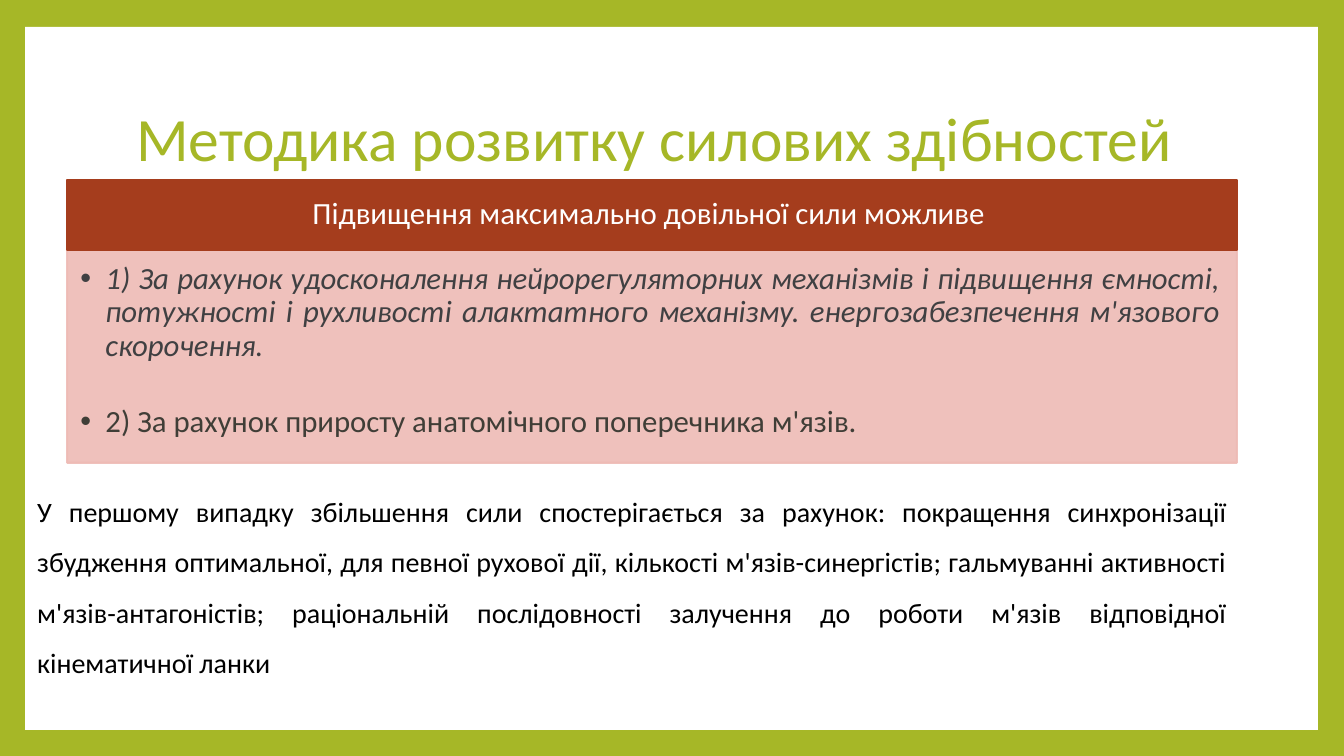
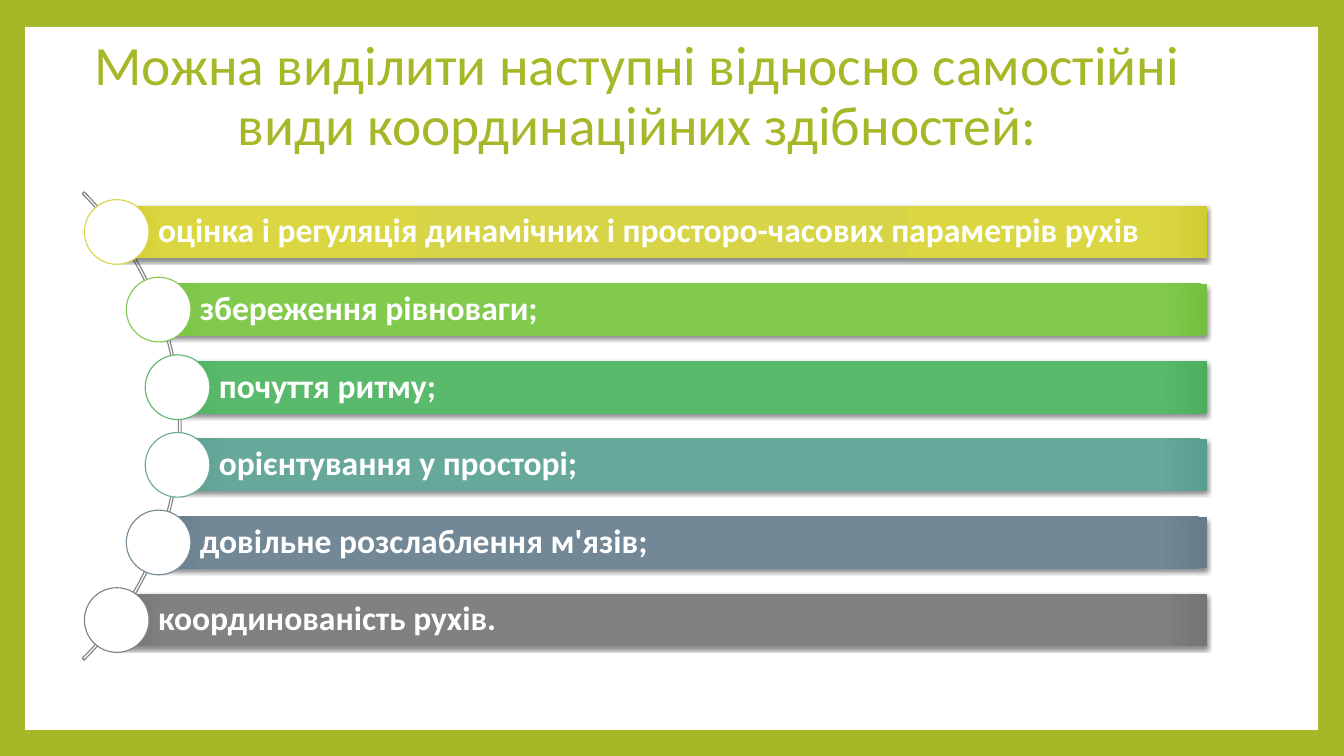
from dataclasses import dataclass
from math import sqrt
from typing import NamedTuple

from pptx import Presentation
from pptx import util as u
from pptx.dml.color import RGBColor
from pptx.enum import shapes, text
from pptx.oxml import parse_xml
from pptx.oxml.ns import nsdecls, qn

COLS, ROWS = 160, 90
UNIT = u.Inches(7.5) / ROWS


@dataclass(frozen=True)
class Theme:
    """Colours, font and type sizes of the deck."""
    font: str = "Calibri"
    green: str = "A6B727"
    white: str = "FFFFFF"
    black: str = "000000"
    rust: str = "A53D1D"
    pink: str = "EEBBB5"
    grey: str = "818183"
    item: str = "404042"
    item_plain: str = "403E37"
    title: float = 44
    title_long: float = 39.6
    panel: float = 22
    note: float = 20
    bar: float = 24
    outline: float = 1.5
    hairline: float = 0.79


T = Theme()


class Box(NamedTuple):
    """A rectangle in grid columns and rows."""
    x: float
    y: float
    w: float
    h: float

    def emu(self):
        """Return left, top, width and height as lengths."""
        return [u.Emu(round(v * UNIT)) for v in self]


TITLE = "Методика розвитку силових здібностей"
PANEL_HEAD = "Підвищення максимально довільної сили можливе "
PANEL_ITEMS = [
    ("1) За рахунок удосконалення нейрорегуляторних механізмів і підвищення ємності, "
     "потужності і рухливості алактатного механізму. енергозабезпечення м'язового "
     "скорочення.", dict(color=T.item, italic=True)),
    ("2) За рахунок приросту анатомічного поперечника м'язів.",
     dict(color=T.item_plain, before=30.7)),
]
NOTE = ("У першому випадку збільшення сили спостерігається за рахунок: покращення "
        "синхронізації збудження оптимальної, для певної рухової дії, кількості "
        "м'язів-синергістів; гальмуванні активності м'язів-антагоністів; раціональній "
        "послідовності залучення до роботи м'язів відповідної кінематичної ланки")
TITLE_LONG = "Можна виділити наступні відносно самостійні види координаційних здібностей:"
ABILITIES = [
    ("оцінка і регуляція динамічних і просторо-часових параметрів рухів",
     ("D7D447", "DBD743", "D0CD33")),
    ("збереження рівноваги;", ("83C851", "82CA4E", "75C03F")),
    ("почуття ритму;", ("5CB76D", "5ABA6C", "4BAF5E")),
    ("орієнтування у просторі;", ("68A79A", "66A89A", "599D8F")),
    ("довільне розслаблення м'язів;", ("748895", "738896", "667C8A")),
    ("координованість рухів.", ("818183", "818183", "757577")),
]


def rgb(value):
    """Turn a hex string into a colour."""
    return RGBColor.from_string(value)


def place(sp, box):
    """Move a shape to a grid box."""
    sp.left, sp.top, sp.width, sp.height = box.emu()


def frame(sp, anchor=text.MSO_ANCHOR.MIDDLE, inset=(0.1, 0.05, 0.1, 0.05)):
    """Set wrapping, anchor and insets and return the text frame."""
    tf = sp.text_frame
    tf.word_wrap, tf.auto_size = True, text.MSO_AUTO_SIZE.NONE
    tf.vertical_anchor = anchor
    tf.margin_left, tf.margin_top, tf.margin_right, tf.margin_bottom = map(u.Inches, inset)
    return tf


def write(p, words, size, color, align=text.PP_ALIGN.LEFT, spacing=0.9, before=0,
          bold=False, italic=False):
    """Fill a paragraph with one formatted run."""
    p.alignment, p.line_spacing = align, spacing
    p.space_before, p.space_after = u.Pt(before), u.Pt(0)
    r = p.add_run()
    r.text = words
    r.font.name, r.font.size = T.font, u.Pt(size)
    r.font.bold, r.font.italic = bold, italic
    r.font.color.rgb = rgb(color)


def paint(sp, fill=None, line=None, width=T.outline):
    """Set fill and outline."""
    if fill:
        sp.fill.solid()
        sp.fill.fore_color.rgb = rgb(fill)
    else:
        sp.fill.background()
    if line:
        sp.line.color.rgb = rgb(line)
        sp.line.width = u.Pt(width)
    else:
        sp.line.fill.background()


def draw(s, kind, box, **style):
    """Add a painted preset shape without a shadow."""
    sp = s.shapes.add_shape(kind, *box.emu())
    sp.shadow.inherit = False
    paint(sp, **style)
    return sp


def fade(sp, percent):
    """Make fill and outline partly transparent."""
    for clr in sp.element.spPr.iter(qn("a:srgbClr")):
        clr.append(parse_xml(f'<a:alpha {nsdecls("a")} val="{percent * 1000}"/>'))


def glow(sp, colors):
    """Give a shape a circular gradient and a soft drop shadow."""
    stops = "".join(f'<a:gs pos="{pos}000"><a:srgbClr val="{c}"/></a:gs>'
                    for pos, c in zip((0, 90, 100), colors))
    spPr = sp.element.spPr
    spPr.replace(spPr.find(qn("a:solidFill")), parse_xml(
        f'<a:gradFill {nsdecls("a")} rotWithShape="1"><a:gsLst>{stops}</a:gsLst>'
        '<a:path path="circle"><a:fillToRect l="100000" t="100000" r="100000" b="100000"/>'
        '</a:path></a:gradFill>'))
    spPr.find(qn("a:effectLst")).append(parse_xml(
        f'<a:outerShdw {nsdecls("a")} blurRad="{u.Pt(3)}" dist="{u.Pt(2)}" dir="5400000" '
        f'rotWithShape="0"><a:srgbClr val="{T.black}"><a:alpha val="45000"/></a:srgbClr>'
        '</a:outerShdw>'))


def add_bullet(p):
    """Hang a round bullet on a paragraph."""
    pPr = p._p.get_or_add_pPr()
    pPr.set("marL", str(u.Inches(0.25)))
    pPr.set("indent", str(-u.Inches(0.25)))
    pPr.append(parse_xml(f'<a:buChar {nsdecls("a")} char="•"/>'))


def master_frame(prs, s):
    """Give the master a green border around a white sheet."""
    master = prs.slide_master
    master.background.fill.solid()
    master.background.fill.fore_color.rgb = rgb(T.green)
    sheet = draw(s, shapes.MSO_SHAPE.RECTANGLE, Box(3, 3.2, 153.9, 83.7), fill=T.white)
    sheet.element.nvSpPr.cNvPr.set("id", "50")
    master.element.cSld.spTree.insert(2, sheet.element)


def title(s, box, words, size, align=text.PP_ALIGN.LEFT):
    """Place and fill the title placeholder."""
    sp = s.shapes.title
    place(sp, box)
    write(frame(sp).paragraphs[0], words, size, T.green, align)


def panel(s, box, head, items):
    """Draw a header band above a tinted bulleted list."""
    head_h = box.h * 0.69 / 2.8
    band = draw(s, shapes.MSO_SHAPE.RECTANGLE, box._replace(h=head_h),
                fill=T.rust, line=T.rust)
    write(frame(band, inset=(0.17, 0.1, 0.17, 0.1)).paragraphs[0], head, T.panel, T.white,
          text.PP_ALIGN.CENTER)
    body = s.placeholders[1]
    place(body, Box(box.x, box.y + head_h, box.w, box.h - head_h))
    paint(body, T.pink, T.pink)
    fade(body, 90)
    tf = frame(body, text.MSO_ANCHOR.TOP, (0.13, 0.13, 0.17, 0.19))
    for i, (words, style) in enumerate(items):
        p = tf.add_paragraph() if i else tf.paragraphs[0]
        write(p, words, T.panel, align=text.PP_ALIGN.JUSTIFY, **style)
        add_bullet(p)


def note(s, box, words):
    """Add a justified, widely spaced paragraph."""
    tb = s.shapes.add_textbox(*box.emu())
    write(frame(tb, text.MSO_ANCHOR.TOP).paragraphs[0], words, T.note, T.black,
          text.PP_ALIGN.JUSTIFY, 1.5)


def arc(s, cx, cy, radius):
    """Draw a thin band over the right quarter of a circle."""
    sp = draw(s, shapes.MSO_SHAPE.BLOCK_ARC,
              Box(cx - radius, cy - radius, 2 * radius, 2 * radius),
              line=T.grey, width=T.hairline)
    for i, value in enumerate((189, 27, 0.004)):
        sp.adjustments[i] = value


def curved_list(s, box, items):
    """Line up bars whose dots follow an arc down the left side."""
    dot, bar_h = box.h / 7, box.h * 0.8 / 7
    span = box.h - dot
    radius = span * 0.85
    cx = box.x + dot / 2 - sqrt(radius ** 2 - span ** 2 / 4)
    cy = box.y + box.h / 2
    arc(s, cx, cy, radius + 0.15)
    for i, (words, colors) in enumerate(items):
        dy = span * (i / (len(items) - 1) - 0.5)
        x, y = cx + sqrt(radius ** 2 - dy ** 2), cy + dy
        bar = draw(s, shapes.MSO_SHAPE.RECTANGLE,
                   Box(x, y - bar_h / 2, box.x + box.w - x, bar_h), fill=colors[0])
        glow(bar, colors)
        write(frame(bar, inset=(0.41, 0.07, 0.07, 0.07)).paragraphs[0], words, T.bar,
              T.white, bold=True)
        draw(s, shapes.MSO_SHAPE.OVAL, Box(x - dot / 2, y - dot / 2, dot, dot),
             fill=T.white, line=colors[0], width=T.hairline)


def strength_slide(s):
    """Build the slide on strength training."""
    title(s, Box(15, 8, 129.6, 17.8), TITLE, T.title)
    panel(s, Box(8, 21.45, 139.25, 33.65), PANEL_HEAD, PANEL_ITEMS)
    note(s, Box(3.25, 56.25, 144, 24.8), NOTE)


def coordination_slide(s):
    """Build the slide on kinds of coordination."""
    title(s, Box(7.15, 8, 137.4, 7.2), TITLE_LONG, T.title_long, text.PP_ALIGN.CENTER)
    curved_list(s, Box(10.05, 23.77, 133.7, 53.9), ABILITIES)


def main():
    """Build and save the deck."""
    prs = Presentation()
    prs.slide_width, prs.slide_height = round(COLS * UNIT), round(ROWS * UNIT)
    strength = prs.slides.add_slide(prs.slide_layouts[1])
    master_frame(prs, strength)
    strength_slide(strength)
    coordination_slide(prs.slides.add_slide(prs.slide_layouts[5]))
    prs.save("out.pptx")


if __name__ == "__main__":
    main()
